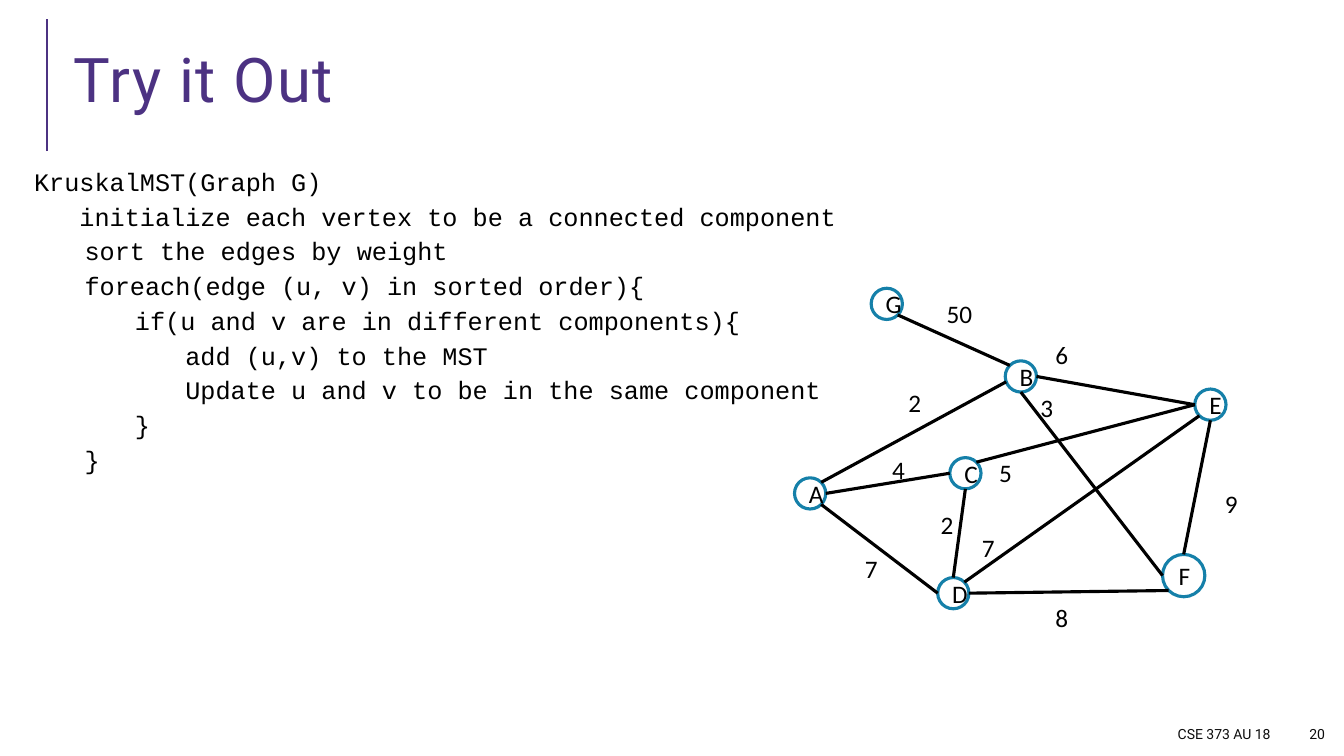
import math

import lxml.etree
import pptx
import pptx.dml.color
import pptx.enum.shapes
import pptx.enum.text
import pptx.oxml.ns
import pptx.util

EMU_PER_PX = 9144  # 100 px to the inch
PURPLE, TEAL, BLACK, WHITE, GREY = "4C3282", "1580A9", "000000", "FFFFFF", "0D0D0D"
ALIGN = pptx.enum.text.PP_ALIGN
MIDDLE = pptx.enum.text.MSO_ANCHOR.MIDDLE

# Code lines with their indent in px
CODE = [
    (0, "KruskalMST(Graph G)"),
    (45, "initialize each vertex to be a connected component"),
    (50, "sort the edges by weight"),
    (50, "foreach(edge (u, v) in sorted order){"),
    (100, "if(u and v are in different components){"),
    (150, "add (u,v) to the MST"),
    (150, "Update u and v to be in the same component"),
    (100, "}"),
    (50, "}"),
]

# Vertices: left, top, diameter within the graph box
VERTICES = {
    "A": (0, 188, 31), "B": (209, 72, 31), "C": (154, 168, 31),
    "D": (142, 287, 31), "E": (397, 100, 31), "F": (365, 264, 42),
    "G": (76, 0, 31),
}

# Edges: vertex and clockwise angle from east at each end,
# then the weight and the left and top of its label
EDGES = [
    ("B", 160, "A", 315, "2", 103, 93),
    ("A", 45, "D", 180, "7", 60, 258),
    ("D", 270, "C", 90, "2", 135, 214),
    ("C", 180, "A", 0, "4", 87, 160),
    ("C", 315, "E", 180, "5", 193, 163),
    ("E", 90, "F", 270, "9", 417, 194),
    ("F", 135, "D", 0, "8", 249, 307),
    ("E", 180, "B", 0, "6", 249, 46),
    ("E", 135, "D", 315, "7", 176, 237),
    ("B", 90, "F", 180, "3", 234, 98),
    ("B", 225, "G", 45, "50", 141, 5),
]


def px(length):
    return pptx.util.Emu(round(length * EMU_PER_PX))


def color(hex_string):
    return pptx.dml.color.RGBColor.from_string(hex_string)


def style(paragraph, font, size, hex_string, align=ALIGN.LEFT):
    paragraph.font.name = font
    paragraph.font.size = pptx.util.Pt(size)
    paragraph.font.color.rgb = color(hex_string)
    paragraph.alignment = align


def add_text(slide, box, text, font, size, hex_string, align=ALIGN.LEFT, anchor=None):
    shape = slide.shapes.add_textbox(*map(px, box))
    shape.text_frame.word_wrap = True
    shape.text_frame.vertical_anchor = anchor
    paragraph = shape.text_frame.paragraphs[0]
    paragraph.text = text
    style(paragraph, font, size, hex_string, align)
    return paragraph


def add_line(slide, start, end, hex_string, width):
    line = slide.shapes.add_connector(
        pptx.enum.shapes.MSO_CONNECTOR.STRAIGHT, *map(px, (*start, *end)))
    line.line.color.rgb = color(hex_string)
    line.line.width = pptx.util.Pt(width)
    lxml.etree.SubElement(line._element.spPr, pptx.oxml.ns.qn("a:effectLst"))


def add_title(slide, left, top, width, height):
    # Accent rule beside the heading
    add_line(slide, (left, top + height), (left, top), PURPLE, 1.5)
    paragraph = add_text(slide, (left + 16, top + 10, width - 16, height - 20),
                         "Try it Out", "Roboto", 44, PURPLE, anchor=MIDDLE)
    paragraph.line_spacing = 0.8
    paragraph.runs[0].font._element.set("spc", "100")


def add_code(slide, left, top, width, height):
    shape = slide.shapes.add_textbox(*map(px, (left, top, width, height)))
    frame = shape.text_frame
    frame.word_wrap = True
    for index, (indent, text) in enumerate(CODE):
        paragraph = frame.add_paragraph() if index else frame.paragraphs[0]
        paragraph.text = text
        style(paragraph, "Courier New", 18, BLACK)
        paragraph.space_before = pptx.util.Pt(2)
        paragraph.space_after = pptx.util.Pt(1.2)
        properties = paragraph._element.get_or_add_pPr()
        properties.set("marL", str(px(indent)))
        properties.set("indent", "0")


def add_vertex(slide, left, top, diameter, name):
    shape = slide.shapes.add_shape(pptx.enum.shapes.MSO_SHAPE.OVAL,
                                   *map(px, (left, top, diameter, diameter)))
    shape.shadow.inherit = False
    shape.fill.solid()
    shape.fill.fore_color.rgb = color(WHITE)
    shape.line.color.rgb = color(TEAL)
    shape.line.width = pptx.util.Pt(2.25)
    shape.text_frame.vertical_anchor = MIDDLE
    paragraph = shape.text_frame.paragraphs[0]
    paragraph.text = name
    style(paragraph, "Calibri", 18, BLACK, ALIGN.CENTER)


def add_graph(slide, left, top):
    def rim_point(name, angle):
        x, y, diameter = VERTICES[name]
        radius = diameter / 2
        turn = math.radians(angle)
        return (left + x + radius * (1 + math.cos(turn)),
                top + y + radius * (1 + math.sin(turn)))

    for name, (x, y, diameter) in VERTICES.items():
        add_vertex(slide, left + x, top + y, diameter, name)
    for first, first_angle, second, second_angle, weight, x, y in EDGES:
        add_line(slide, rim_point(first, first_angle),
                 rim_point(second, second_angle), BLACK, 2.25)
        add_text(slide, (left + x, top + y, 23 + 12 * len(weight), 40),
                 weight, "Calibri", 18, BLACK)


def add_footer(slide, left, top, width, height):
    number_width = 46
    add_text(slide, (left, top, width - number_width - 8, height),
             "CSE 373 AU 18", "Roboto", 10, GREY, ALIGN.RIGHT, MIDDLE)
    add_text(slide, (left + width - number_width, top, number_width, height),
             "20", "Roboto", 10, GREY, ALIGN.RIGHT, MIDDLE)


def main():
    presentation = pptx.Presentation()
    presentation.slide_width = px(1333)
    presentation.slide_height = px(750)
    slide = presentation.slides.add_slide(presentation.slide_layouts[6])
    add_title(slide, 47, 19, 1239, 131)
    add_graph(slide, 788, 286)
    add_code(slide, 24, 160, 824, 305)
    add_footer(slide, 625, 713, 699, 30)
    presentation.save("out.pptx")


if __name__ == "__main__":
    main()
